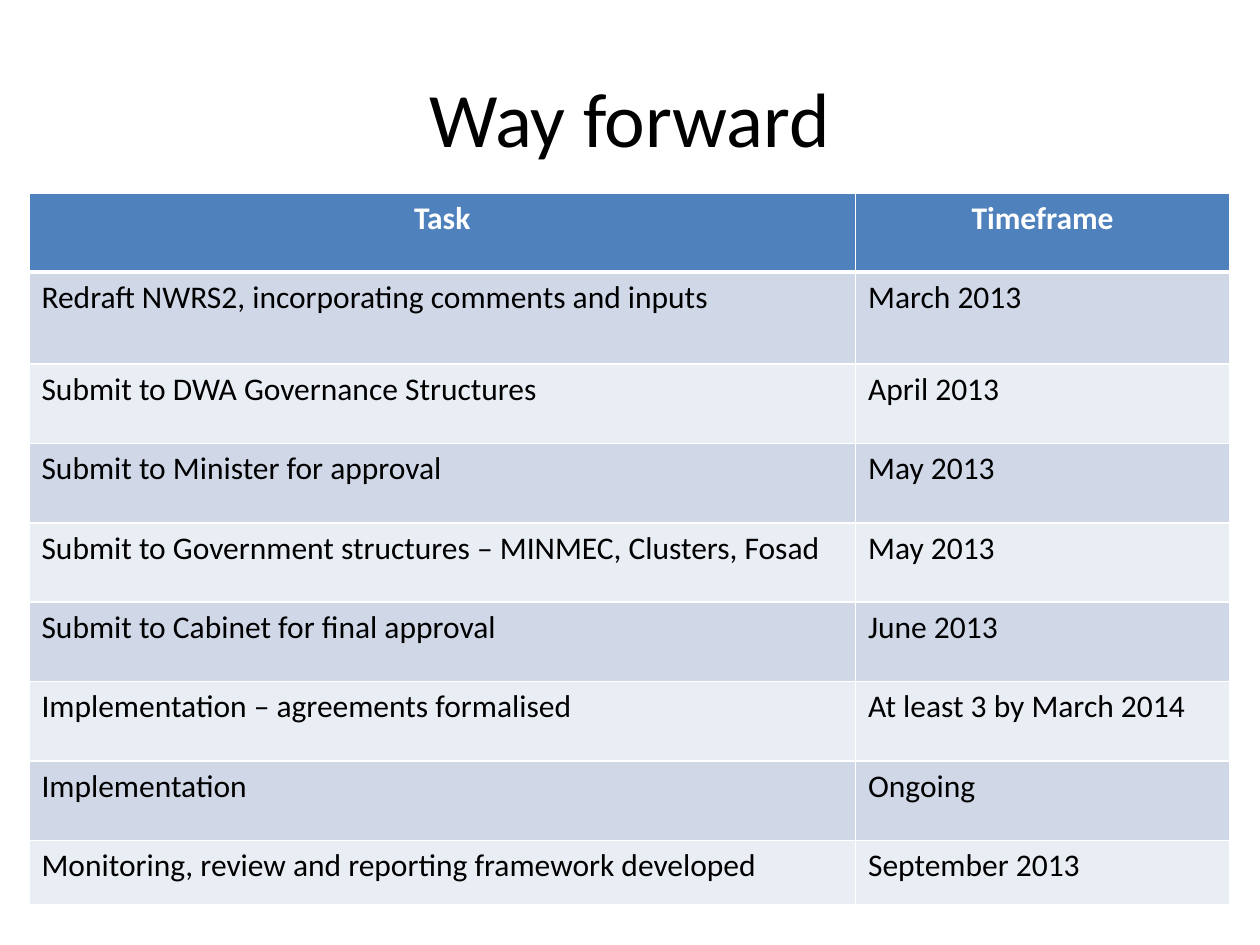
from typing import NamedTuple

from lxml import etree
from pptx import Presentation
from pptx import util as u
from pptx.dml.color import RGBColor
from pptx.enum import text
from pptx.oxml import ns

FONT = "Calibri"
COLORS = {
    "ink": "000000",
    "white": "FFFFFF",
    "header": "4F81BD",
    "odd": "D0D8E8",
    "even": "E9EDF4",
}


class Step(NamedTuple):
    task: str
    timeframe: str
    height: float = 0.63


HEADER = Step("Task", "Timeframe")
STEPS = [
    Step("Redraft NWRS2, incorporating comments and inputs", "March 2013", 0.73),
    Step("Submit to DWA Governance Structures", "April 2013"),
    Step("Submit to Minister for approval", "May 2013"),
    Step("Submit to Government structures – MINMEC, Clusters, Fosad", "May 2013"),
    Step("Submit to Cabinet for final approval", "June 2013"),
    Step("Implementation – agreements formalised", "At least 3 by March 2014"),
    Step("Implementation", "Ongoing"),
    Step("Monitoring, review and reporting framework developed", "September 2013", 0.51),
]
COLUMN_WIDTHS = (6.56, 2.97)


def write(frame, words: str, size: float, color: str, bold: bool = False,
          centered: bool = False) -> None:
    """Fill a text frame with one styled paragraph."""
    frame.word_wrap = True
    paragraph = frame.paragraphs[0]
    paragraph.text = words
    paragraph.alignment = text.PP_ALIGN.CENTER if centered else text.PP_ALIGN.LEFT
    font = paragraph.font
    font.name, font.size, font.bold = FONT, u.Pt(size), bold
    font.color.rgb = RGBColor.from_string(COLORS[color])


def add_borders(cell, top: float = 1, bottom: float = 1) -> None:
    """Draw white cell borders; widths are in points."""
    properties = cell._tc.get_or_add_tcPr()
    for side, width in (("L", 1), ("R", 1), ("T", top), ("B", bottom)):
        line = etree.SubElement(properties, ns.qn(f"a:ln{side}"), w=str(u.Pt(width)))
        fill = etree.SubElement(line, ns.qn("a:solidFill"))
        etree.SubElement(fill, ns.qn("a:srgbClr"), val=COLORS["white"])


def add_title(page, words: str) -> None:
    box = page.shapes.add_textbox(u.Inches(0.5), u.Inches(0.3), u.Inches(9), u.Inches(1.25))
    box.text_frame.vertical_anchor = text.MSO_ANCHOR.MIDDLE
    write(box.text_frame, words, 44, "ink", centered=True)


def add_schedule(page, rows: list[Step]) -> None:
    table = page.shapes.add_table(
        len(rows), len(COLUMN_WIDTHS), u.Inches(0.23), u.Inches(1.53),
        u.Inches(sum(COLUMN_WIDTHS)), u.Inches(sum(row.height for row in rows)),
    ).table
    for column, width in zip(table.columns, COLUMN_WIDTHS):
        column.width = u.Inches(width)
    for index, row in enumerate(rows):
        table.rows[index].height = u.Inches(row.height)
        is_header = index == 0
        band = "header" if is_header else "odd" if index % 2 else "even"
        for column, words in enumerate((row.task, row.timeframe)):
            cell = table.cell(index, column)
            # Borders must precede the fill in the cell properties
            add_borders(cell, top=3 if index == 1 else 1, bottom=3 if is_header else 1)
            cell.fill.solid()
            cell.fill.fore_color.rgb = RGBColor.from_string(COLORS[band])
            write(cell.text_frame, words, 18, "white" if is_header else "ink",
                  bold=is_header, centered=is_header)


def main() -> None:
    deck = Presentation()
    deck.slide_width, deck.slide_height = u.Inches(10), u.Inches(7.5)
    page = deck.slides.add_slide(deck.slide_layouts[6])

    # Heading
    add_title(page, "Way forward")
    # Tasks and their timeframes
    add_schedule(page, [HEADER, *STEPS])

    deck.save("out.pptx")


if __name__ == "__main__":
    main()
